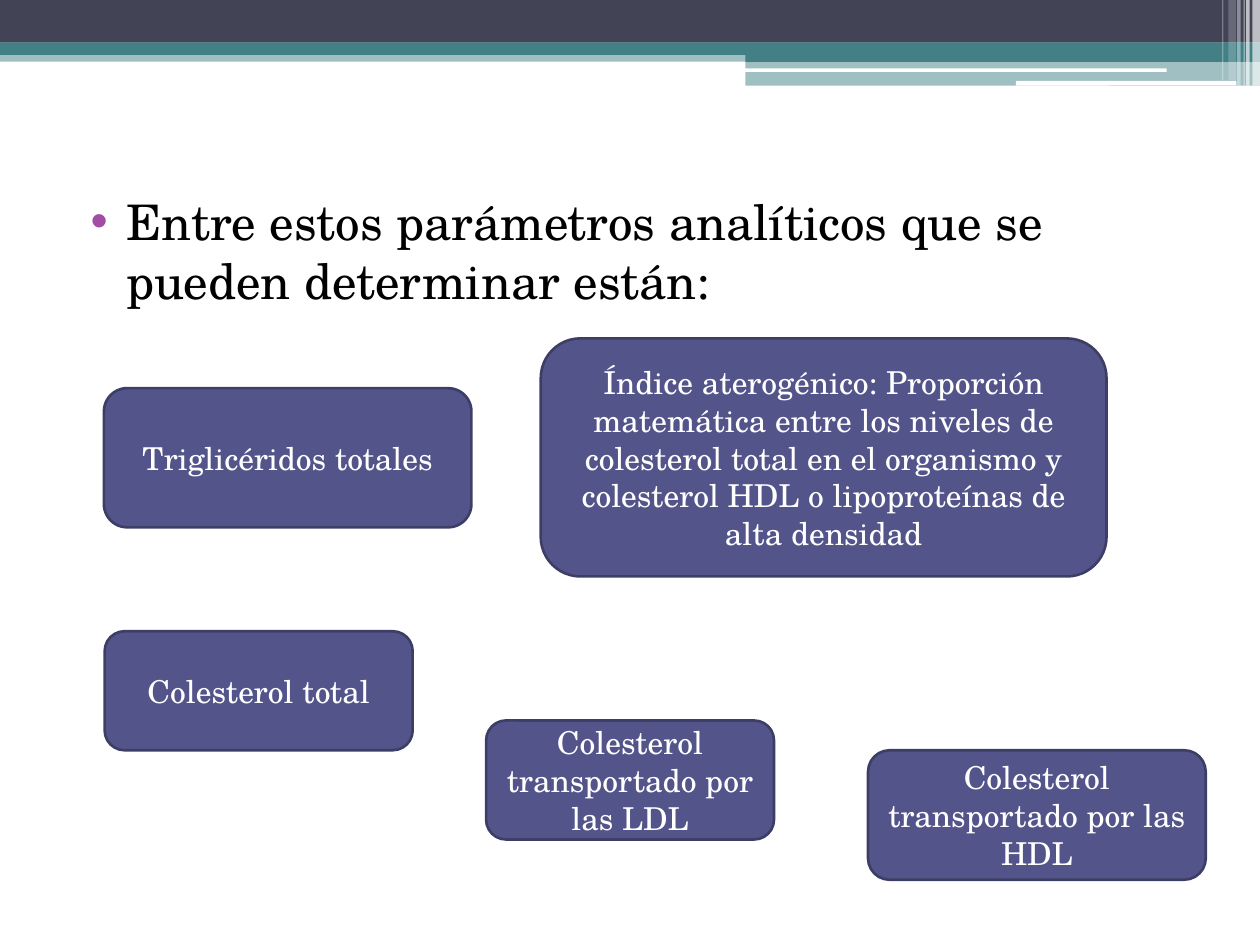
import pptx
import pptx.dml.color
import pptx.enum.shapes
import pptx.enum.text
import pptx.oxml
import pptx.oxml.ns
import pptx.util
from lxml import etree

Pt = pptx.util.Pt
SHAPE = pptx.enum.shapes.MSO_SHAPE
FONT = "TeX Gyre Schola"
TEAL, WHITE = "438086", "FFFFFF"


def rgb(value):
    return pptx.dml.color.RGBColor.from_string(value)


def add_block(kind, box, color, opacity=100):
    """Add a filled shape without outline; box is left, top, width, height."""
    block = slide.shapes.add_shape(kind, *[Pt(length) for length in box])
    block.shadow.inherit = False
    block.fill.solid()
    block.fill.fore_color.rgb = rgb(color)
    block.line.fill.background()
    if opacity < 100:
        srgb = block.fill._xPr.find(".//" + pptx.oxml.ns.qn("a:srgbClr"))
        alpha = etree.SubElement(srgb, pptx.oxml.ns.qn("a:alpha"))
        alpha.set("val", str(opacity * 1000))
    return block


deck = pptx.Presentation()
deck.slide_width, deck.slide_height = Pt(720), Pt(540)
slide = deck.slides.add_slide(deck.slide_layouts[1])
empty_title = slide.shapes.title.element
empty_title.getparent().remove(empty_title)

# Header bands
for box, color, opacity in [
    ((0, 28.8, 720, 6.5), TEAL, 50),
    ((0, 0, 720, 24.4), "424456", 100),
    ((0, 24.2, 720, 7.2), TEAL, 100),
    ((426, 28.2, 294, 7.2), TEAL, 100),
    ((426, 34.7, 294, 14.2), TEAL, 50),
]:
    add_block(SHAPE.RECTANGLE, box, color, opacity)

for box in [(425.5, 39.1, 241.2, 2), (580.5, 46.3, 126, 2.6)]:
    add_block(SHAPE.ROUNDED_RECTANGLE, box, WHITE)

# Vertical stripes at the right edge
for left, width, height, opacity in [
    (715.7, 4.3, 49, 65),
    (712.1, 2, 49, 65),
    (710.6, 0.7, 49, 60),
    (707, 2, 49, 40),
    (702, 4.3, 46, 20),
    (698.4, 0.7, 46, 30),
]:
    add_block(SHAPE.RECTANGLE, (left, 0, width, height), WHITE, opacity)

# Introductory bullet
intro = slide.placeholders[1]
intro.left, intro.top, intro.width, intro.height = Pt(36), Pt(105.8), Pt(648), Pt(412)
intro.text_frame.text = "Entre estos parámetros analíticos que se pueden determinar están:"
intro.text_frame.auto_size = pptx.enum.text.MSO_AUTO_SIZE.NONE
sentence = intro.text_frame.paragraphs[0]
sentence.space_before = Pt(3)
sentence.font.size = Pt(28)
sentence.runs[0].font.name = FONT
sentence.runs[0].font.size = Pt(28)
sentence.runs[0].font.color.rgb = rgb("000000")
properties = sentence._p.get_or_add_pPr()
properties.set("marL", str(Pt(28.8)))
properties.set("indent", str(Pt(-20.2)))
namespace = pptx.oxml.ns.nsdecls("a")
for bullet_part in [
    f'<a:buClr {namespace}><a:srgbClr val="A04DA3"/></a:buClr>',
    f'<a:buFont {namespace} typeface="Arial"/>',
    f'<a:buChar {namespace} char="•"/>',
]:
    properties.insert_element_before(pptx.oxml.parse_xml(bullet_part), "a:defRPr")

# Analytical parameters
for box, wording in [
    ((59.8, 360.7, 176, 68), "Colesterol total"),
    ((277.8, 411.7, 164.5, 68), "Colesterol\ntransportado por las LDL"),
    ((496, 428.7, 193, 74), "Colesterol transportado por las HDL"),
    ((59.4, 221.8, 210, 79.5), "Triglicéridos totales"),
    ((309, 193.4, 323.3, 136), "Índice aterogénico: Proporción matemática entre los niveles "
     "de colesterol total en el organismo y colesterol HDL o lipoproteínas de alta densidad"),
]:
    parameter = add_block(SHAPE.ROUNDED_RECTANGLE, box, "53548A")
    parameter.line.color.rgb = rgb("3D3E66")
    parameter.line.width = Pt(1.5)
    frame = parameter.text_frame
    frame.text = wording
    frame.word_wrap = True
    frame.vertical_anchor = pptx.enum.text.MSO_ANCHOR.MIDDLE
    for paragraph in frame.paragraphs:
        paragraph.alignment = pptx.enum.text.PP_ALIGN.CENTER
        for run in paragraph.runs:
            run.font.name = FONT
            run.font.size = Pt(18)
            run.font.color.rgb = rgb(WHITE)

deck.save("out.pptx")
